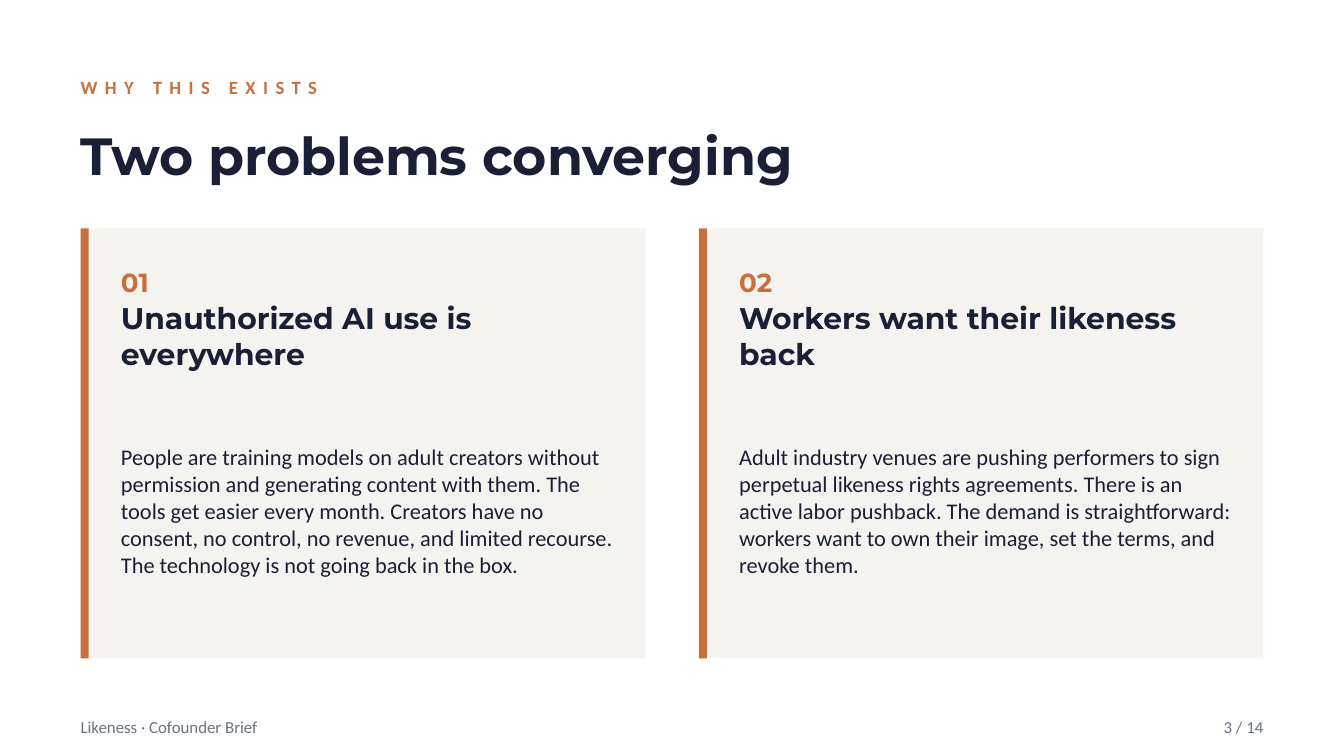
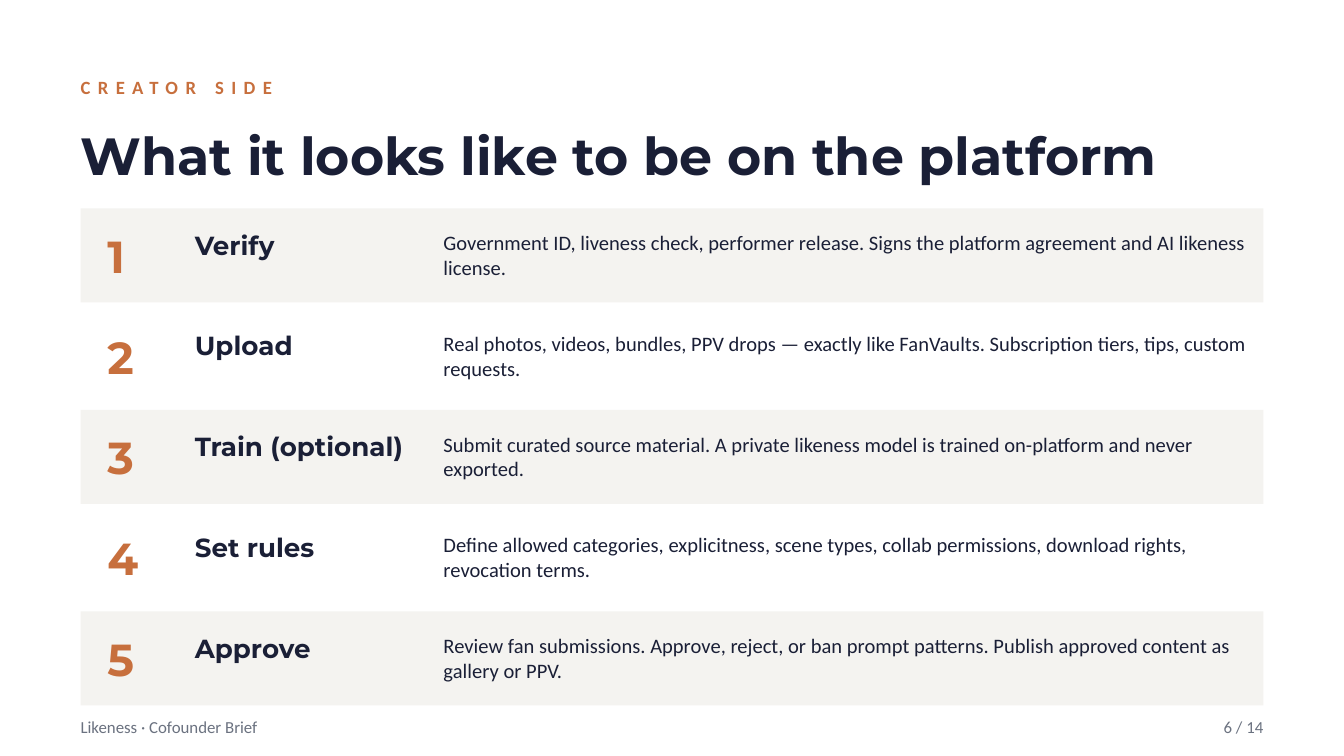
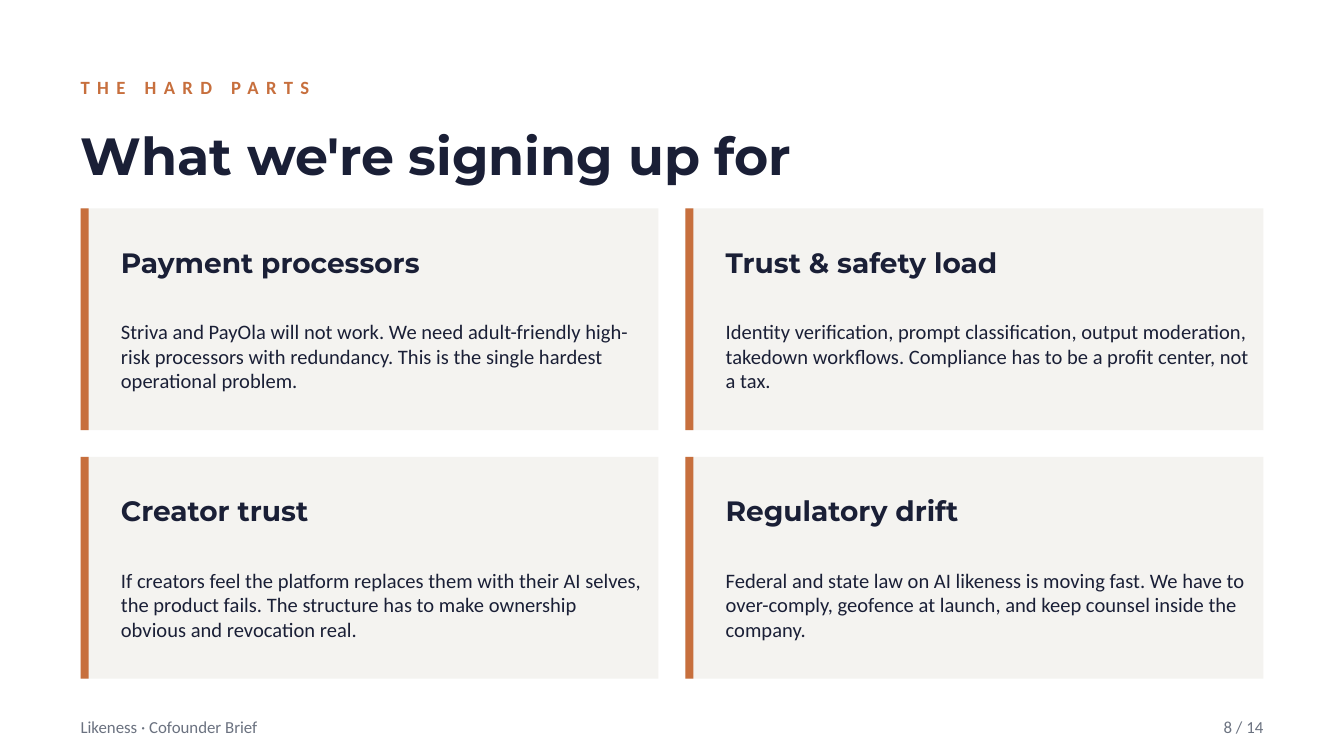
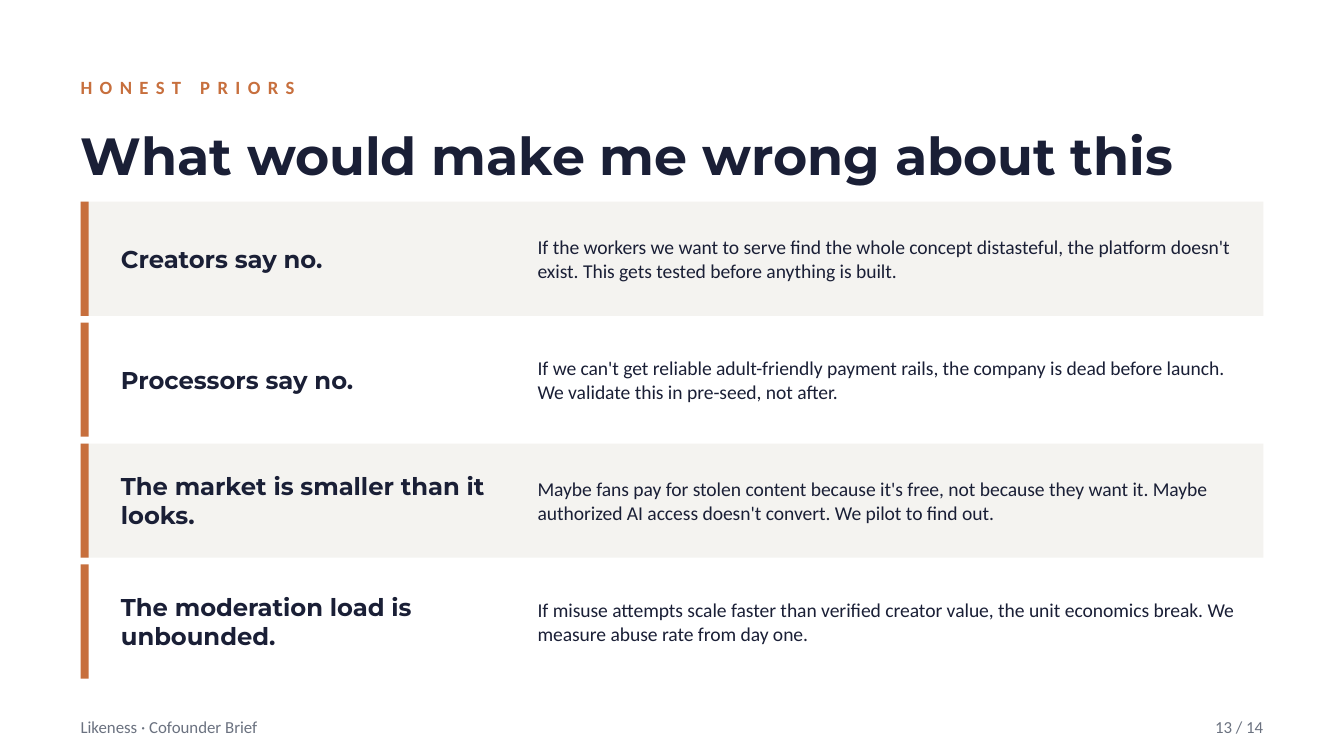
from dataclasses import dataclass
from typing import NamedTuple, Optional

from pptx import Presentation
from pptx.dml.color import RGBColor
from pptx.enum.shapes import MSO_SHAPE as Preset
from pptx.enum.text import MSO_ANCHOR as Anchor, MSO_AUTO_SIZE as AutoSize, PP_ALIGN as Align
from pptx.util import Pt

COLORS = {
    "ink": "1A1F36",
    "accent": "C76F3D",
    "panel": "F4F3F0",
    "white": "FFFFFF",
    "muted": "6B7280",
}
HEADING_FONT, BODY_FONT = "Montserrat", "Calibri"
MARGIN = 43.2
CONTENT_WIDTH = 633.6
BAR_WIDTH = 4.32
TITLE_ONLY = 5
TOTAL_PAGES = 14


class Box(NamedTuple):
    left: float
    top: float
    width: float
    height: float


class Style(NamedTuple):
    size: float
    font: str = BODY_FONT
    color: str = "ink"
    bold: bool = False
    spacing: float = 0
    space_after: float = 0
    align: Align = Align.LEFT


class Slot(NamedTuple):
    """A text area placed relative to the corner of its panel."""
    box: Box
    style: Style


@dataclass
class PanelGrid:
    top: float
    width: float
    height: float
    gap: float
    slots: list[Slot]
    columns: int = 1
    has_bar: bool = True
    fills: tuple[Optional[str], ...] = ("panel",)  # cycled over the panels


@dataclass
class Page:
    number: int
    eyebrow: str
    title: str
    grid: PanelGrid
    panels: list[tuple[str, ...]]


def heading(size: float, color: str = "ink") -> Style:
    return Style(size, HEADING_FONT, color, bold=True)


EYEBROW = Style(10, color="accent", bold=True, spacing=4)
FOOTER = Style(9, color="muted")
EYEBROW_BOX = Box(MARGIN, 36, 576, 21.6)
TITLE_BOX = Box(MARGIN, 57.6, 648, 50.4)
FOOTER_BOX = Box(MARGIN, 380.16, 288, 18)
PAGE_NUMBER_BOX = Box(MARGIN + CONTENT_WIDTH - 72, 380.16, 72, 18)

PROBLEM_CARDS = PanelGrid(
    top=122.4, width=302.4, height=230.4, gap=28.8, columns=2,
    slots=[
        Slot(Box(21.6, 14.4, 72, 28.8), heading(14, "accent")),
        Slot(Box(21.6, 39.6, 266.4, 36), heading(16)),
        Slot(Box(21.6, 82.8, 266.4, 136.8), Style(12, space_after=4)),
    ],
)
STEP_ROWS = PanelGrid(
    top=111.6, width=CONTENT_WIDTH, height=50.4, gap=3.6,
    has_bar=False, fills=("panel", None),
    slots=[
        Slot(Box(14.4, 7.2, 36, 36), heading(24, "accent")),
        Slot(Box(61.2, 5.04, 129.6, 28.8), heading(14)),
        Slot(Box(194.4, 5.04, 432, 39.6), Style(11)),
    ],
)
RISK_CARDS = PanelGrid(
    top=111.6, width=309.6, height=118.8, gap=14.4, columns=2,
    slots=[
        Slot(Box(21.6, 14.4, 280.8, 28.8), heading(15)),
        Slot(Box(21.6, 46.8, 280.8, 64.8), Style(11)),
    ],
)
DOUBT_ROWS = PanelGrid(
    top=108, width=CONTENT_WIDTH, height=61.2, gap=3.6, fills=("panel", "white"),
    slots=[
        Slot(Box(21.6, 7.2, 216, 46.8), heading(13)),
        Slot(Box(244.8, 7.2, 381.6, 46.8), Style(10.5)),
    ],
)
# Step rows sit a little further apart than the doubt rows are tall-spaced.

PAGES = [
    Page(3, "WHY THIS EXISTS", "Two problems converging", PROBLEM_CARDS, [
        ("01", "Unauthorized AI use is everywhere",
         "People are training models on adult creators without permission and generating "
         "content with them. The tools get easier every month. Creators have no consent, "
         "no control, no revenue, and limited recourse. The technology is not going back "
         "in the box."),
        ("02", "Workers want their likeness back",
         "Adult industry venues are pushing performers to sign perpetual likeness rights "
         "agreements. There is an active labor pushback. The demand is straightforward: "
         "workers want to own their image, set the terms, and revoke them."),
    ]),
    Page(6, "CREATOR SIDE", "What it looks like to be on the platform", STEP_ROWS, [
        ("1", "Verify",
         "Government ID, liveness check, performer release. Signs the platform agreement "
         "and AI likeness license."),
        ("2", "Upload",
         "Real photos, videos, bundles, PPV drops — exactly like FanVaults. Subscription "
         "tiers, tips, custom requests."),
        ("3", "Train (optional)",
         "Submit curated source material. A private likeness model is trained on-platform "
         "and never exported."),
        ("4", "Set rules",
         "Define allowed categories, explicitness, scene types, collab permissions, "
         "download rights, revocation terms."),
        ("5", "Approve",
         "Review fan submissions. Approve, reject, or ban prompt patterns. Publish "
         "approved content as gallery or PPV."),
    ]),
    Page(8, "THE HARD PARTS", "What we're signing up for", RISK_CARDS, [
        ("Payment processors",
         "Striva and PayOla will not work. We need adult-friendly high-risk processors "
         "with redundancy. This is the single hardest operational problem."),
        ("Trust & safety load",
         "Identity verification, prompt classification, output moderation, takedown "
         "workflows. Compliance has to be a profit center, not a tax."),
        ("Creator trust",
         "If creators feel the platform replaces them with their AI selves, the product "
         "fails. The structure has to make ownership obvious and revocation real."),
        ("Regulatory drift",
         "Federal and state law on AI likeness is moving fast. We have to over-comply, "
         "geofence at launch, and keep counsel inside the company."),
    ]),
    Page(13, "HONEST PRIORS", "What would make me wrong about this", DOUBT_ROWS, [
        ("Creators say no.",
         "If the workers we want to serve find the whole concept distasteful, the platform "
         "doesn't exist. This gets tested before anything is built."),
        ("Processors say no.",
         "If we can't get reliable adult-friendly payment rails, the company is dead before "
         "launch. We validate this in pre-seed, not after."),
        ("The market is smaller than it looks.",
         "Maybe fans pay for stolen content because it's free, not because they want it. "
         "Maybe authorized AI access doesn't convert. We pilot to find out."),
        ("The moderation load is unbounded.",
         "If misuse attempts scale faster than verified creator value, the unit economics "
         "break. We measure abuse rate from day one."),
    ]),
]


def in_points(box: Box) -> list[Pt]:
    return [Pt(length) for length in box]


def fill_text(shape, text: str, style: Style) -> None:
    frame = shape.text_frame
    frame.word_wrap = True
    frame.auto_size = AutoSize.NONE
    frame.vertical_anchor = Anchor.MIDDLE
    frame.margin_left = frame.margin_top = frame.margin_right = frame.margin_bottom = 0
    paragraph = frame.paragraphs[0]
    run = paragraph.add_run()
    run.text = text
    if style.spacing:
        run._r.get_or_add_rPr().set("spc", str(round(style.spacing * 100)))
    paragraph.alignment = style.align
    if style.space_after:
        paragraph.space_after = Pt(style.space_after)
    font = paragraph.font
    font.name, font.size, font.bold = style.font, Pt(style.size), style.bold
    font.color.rgb = RGBColor.from_string(COLORS[style.color])


def add_text(slide, box: Box, text: str, style: Style) -> None:
    fill_text(slide.shapes.add_textbox(*in_points(box)), text, style)


def add_rectangle(slide, box: Box, color: str) -> None:
    shape = slide.shapes.add_shape(Preset.RECTANGLE, *in_points(box))
    shape.shadow.inherit = False
    shape.fill.solid()
    shape.fill.fore_color.rgb = RGBColor.from_string(COLORS[color])
    shape.line.fill.background()


def add_title(slide, text: str) -> None:
    title = slide.shapes.title
    title.left, title.top, title.width, title.height = in_points(TITLE_BOX)
    fill_text(title, text, heading(28))


def add_panels(slide, grid: PanelGrid, panels: list[tuple[str, ...]]) -> None:
    for index, texts in enumerate(panels):
        row, column = divmod(index, grid.columns)
        left = MARGIN + column * (grid.width + grid.gap)
        top = grid.top + row * (grid.height + grid.gap)
        fill = grid.fills[index % len(grid.fills)]
        if fill:
            add_rectangle(slide, Box(left, top, grid.width, grid.height), fill)
        if grid.has_bar:
            add_rectangle(slide, Box(left, top, BAR_WIDTH, grid.height), "accent")
        for (box, style), text in zip(grid.slots, texts):
            placed = box._replace(left=left + box.left, top=top + box.top)
            add_text(slide, placed, text, style)


def add_page(presentation, page: Page) -> None:
    slide = presentation.slides.add_slide(presentation.slide_layouts[TITLE_ONLY])
    add_text(slide, EYEBROW_BOX, page.eyebrow, EYEBROW)
    add_title(slide, page.title)
    add_panels(slide, page.grid, page.panels)
    add_text(slide, FOOTER_BOX, "Likeness · Cofounder Brief", FOOTER)
    add_text(slide, PAGE_NUMBER_BOX, f"{page.number} / {TOTAL_PAGES}",
             FOOTER._replace(align=Align.RIGHT))


def main() -> None:
    presentation = Presentation()
    presentation.slide_width, presentation.slide_height = Pt(720), Pt(405)
    for page in PAGES:
        add_page(presentation, page)
    presentation.save("out.pptx")


if __name__ == "__main__":
    main()
